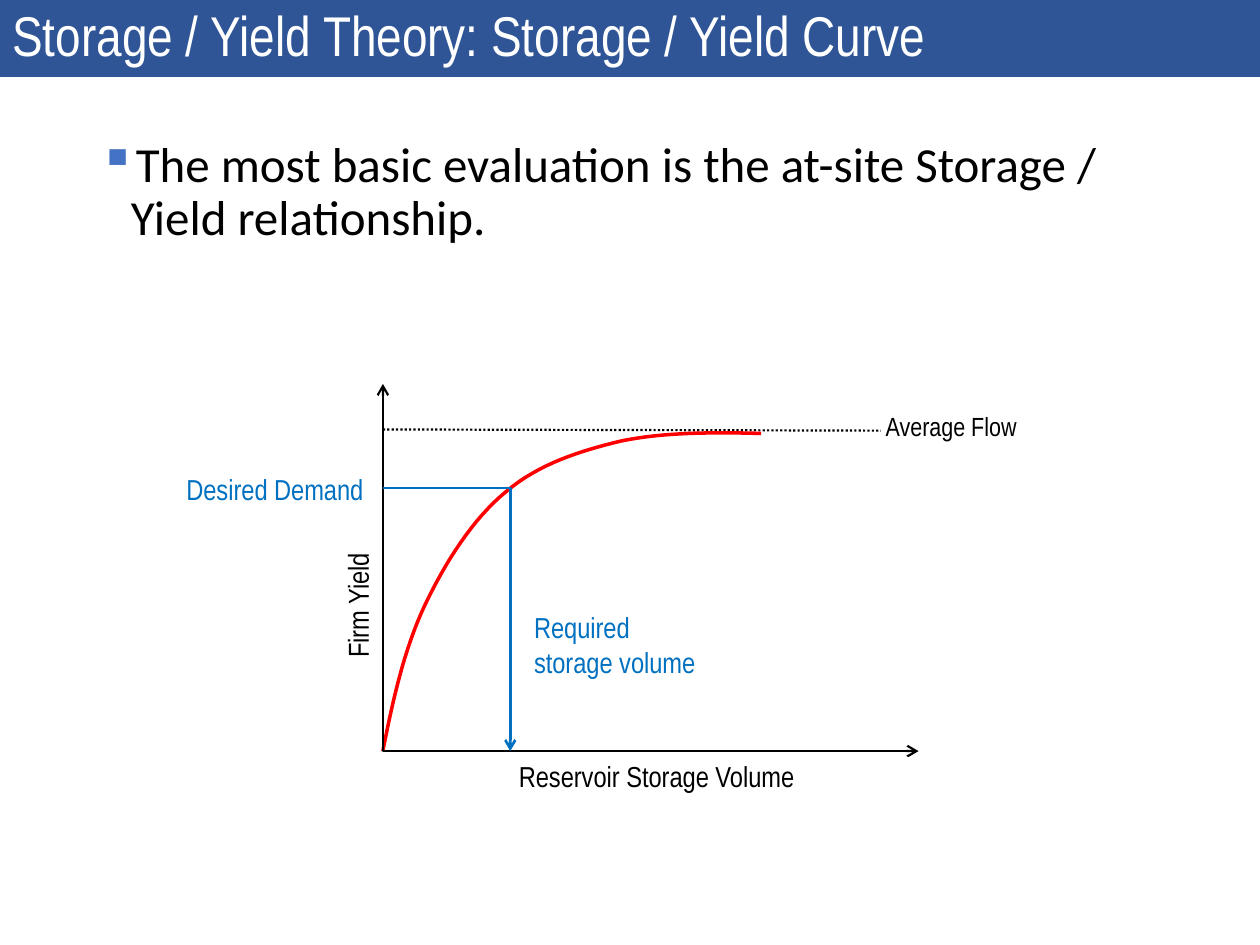
from dataclasses import dataclass

from lxml import etree
from pptx import Presentation
from pptx.dml.color import RGBColor
from pptx.enum.dml import MSO_LINE
from pptx.enum.shapes import MSO_CONNECTOR, MSO_SHAPE
from pptx.enum.text import MSO_ANCHOR, PP_ALIGN
from pptx.oxml.ns import qn
from pptx.util import Pt

RECTANGLE = MSO_SHAPE.RECTANGLE
STRAIGHT = MSO_CONNECTOR.STRAIGHT
DOTTED = MSO_LINE.ROUND_DOT
MIDDLE = MSO_ANCHOR.MIDDLE
LEFT = PP_ALIGN.LEFT

BLACK = RGBColor(0x00, 0x00, 0x00)
WHITE = RGBColor(0xFF, 0xFF, 0xFF)
NAVY = RGBColor(0x2F, 0x55, 0x97)
BULLET_BLUE = RGBColor(0x44, 0x72, 0xC4)
DEMAND_BLUE = RGBColor(0x00, 0x70, 0xC0)
CURVE_RED = RGBColor(0xFF, 0x00, 0x00)

NARROW = "Arial Narrow"
BODY_FONT = "Calibri"

Point = tuple[float, float]

ORIGIN_X, ORIGIN_Y = 218.8, 429.2
YIELD_TOP, STORAGE_END = 219.4, 524.9
DEMAND_X, DEMAND_Y = 291.6, 278.8
STEPS_PER_ARC = 16


@dataclass(frozen=True)
class Label:
    text: str
    left: float
    top: float
    width: float
    height: float
    color: RGBColor = BLACK
    size: float = 16.5
    rotation: float = 0


@dataclass(frozen=True)
class Trace:
    points: list[Point]
    color: RGBColor
    width: float
    arrows: tuple[str, ...] = ()


def bezier_points(start: Point, arcs: list[tuple[Point, Point, Point]]) -> list[Point]:
    points = [start]
    for first, second, end in arcs:
        for step in range(1, STEPS_PER_ARC + 1):
            t = step / STEPS_PER_ARC
            weights = ((1 - t) ** 3, 3 * t * (1 - t) ** 2, 3 * t**2 * (1 - t), t**3)
            controls = (start, first, second, end)
            points.append((
                sum(w * x for w, (x, _) in zip(weights, controls)),
                sum(w * y for w, (_, y) in zip(weights, controls)),
            ))
        start = end
    return points


def style_text(paragraph, font_name: str, size: float, color: RGBColor) -> None:
    paragraph.alignment = LEFT
    for run in paragraph.runs:
        run.font.name = font_name
        run.font.size = Pt(size)
        run.font.color.rgb = color


def draw_title(slide, text: str) -> None:
    banner = slide.shapes.add_shape(RECTANGLE, Pt(0), Pt(0), Pt(720), Pt(44))
    banner.shadow.inherit = False
    banner.fill.solid()
    banner.fill.fore_color.rgb = NAVY
    banner.line.fill.background()
    banner.text_frame.text = text
    banner.text_frame.vertical_anchor = MIDDLE
    paragraph = banner.text_frame.paragraphs[0]
    paragraph.line_spacing = 0.9
    style_text(paragraph, NARROW, 32, WHITE)


def draw_statement(slide, text: str) -> None:
    statement = slide.shapes.add_textbox(Pt(49.7), Pt(76.3), Pt(620.6), Pt(409.7))
    statement.text_frame.word_wrap = True
    statement.text_frame.text = text
    paragraph = statement.text_frame.paragraphs[0]
    properties = paragraph._p.get_or_add_pPr()
    properties.set("marL", str(Pt(18)))
    properties.set("indent", str(Pt(-18)))
    bullet_color = etree.SubElement(properties, qn("a:buClr"))
    etree.SubElement(bullet_color, qn("a:srgbClr"), val=str(BULLET_BLUE))
    etree.SubElement(properties, qn("a:buChar"), char="▪")
    paragraph.line_spacing = 0.9
    style_text(paragraph, BODY_FONT, 28, BLACK)


def draw_label(slide, label: Label) -> None:
    caption = slide.shapes.add_textbox(
        Pt(label.left), Pt(label.top), Pt(label.width), Pt(label.height))
    caption.rotation = label.rotation
    caption.text_frame.word_wrap = True
    caption.text_frame.text = label.text
    style_text(caption.text_frame.paragraphs[0], NARROW, label.size, label.color)


def draw_trace(slide, trace: Trace) -> None:
    start, *rest = [(Pt(x), Pt(y)) for x, y in trace.points]
    builder = slide.shapes.build_freeform(*start)
    builder.add_line_segments(rest, close=False)
    outline = builder.convert_to_shape()
    outline.shadow.inherit = False
    outline.fill.background()
    outline.line.color.rgb = trace.color
    outline.line.width = Pt(trace.width)
    line_properties = outline.line._get_or_add_ln()
    for end in trace.arrows:
        etree.SubElement(line_properties, qn(f"a:{end}"), type="arrow")


def draw_average_flow(slide) -> None:
    average = slide.shapes.add_connector(
        STRAIGHT, Pt(ORIGIN_X), Pt(245.4), Pt(503.4), Pt(246.1))
    average.line.color.rgb = BLACK
    average.line.width = Pt(1.25)
    average.line.dash_style = DOTTED
    etree.SubElement(average._element.spPr, qn("a:effectLst"))


YIELD_CURVE = bezier_points((ORIGIN_X, ORIGIN_Y), [
    ((224.6, 399.6), (231.1, 370.8), (242.6, 346.3)),
    ((254.2, 321.8), (270, 296.6), (289.4, 280.8)),
    ((308.2, 265), (331.2, 257.8), (355, 252)),
    ((379.4, 247), (407.5, 247), (434.9, 247.7)),
])

TRACES = [
    Trace(YIELD_CURVE, CURVE_RED, 2),
    Trace([(ORIGIN_X, YIELD_TOP), (ORIGIN_X, ORIGIN_Y), (STORAGE_END, ORIGIN_Y)],
          BLACK, 1.25, ("headEnd", "tailEnd")),
    Trace([(DEMAND_X, ORIGIN_Y), (DEMAND_X, DEMAND_Y), (ORIGIN_X, DEMAND_Y)],
          DEMAND_BLUE, 1.5, ("headEnd",)),
]

LABELS = [
    Label("Average Flow", 499, 231.1, 91.4, 25.2, size=15),
    Label("Reservoir Storage Volume", 289.4, 429.8, 179.3, 27.4),
    Label("Required storage volume", 298.1, 344.9, 110.2, 46.8, DEMAND_BLUE),
    Label("Desired Demand", 99.4, 265.7, 123.1, 27.4, DEMAND_BLUE),
    Label("Firm Yield", 149, 313.9, 110.9, 27.4, rotation=270),
]


def main() -> None:
    presentation = Presentation()
    presentation.slide_width = Pt(720)
    presentation.slide_height = Pt(540)
    slide = presentation.slides.add_slide(presentation.slide_layouts[6])
    draw_title(slide, "Storage / Yield Theory: Storage / Yield Curve")
    draw_statement(
        slide, "The most basic evaluation is the at-site Storage / Yield relationship.")
    draw_average_flow(slide)
    for trace in TRACES:
        draw_trace(slide, trace)
    for label in LABELS:
        draw_label(slide, label)
    presentation.save("out.pptx")


if __name__ == "__main__":
    main()
